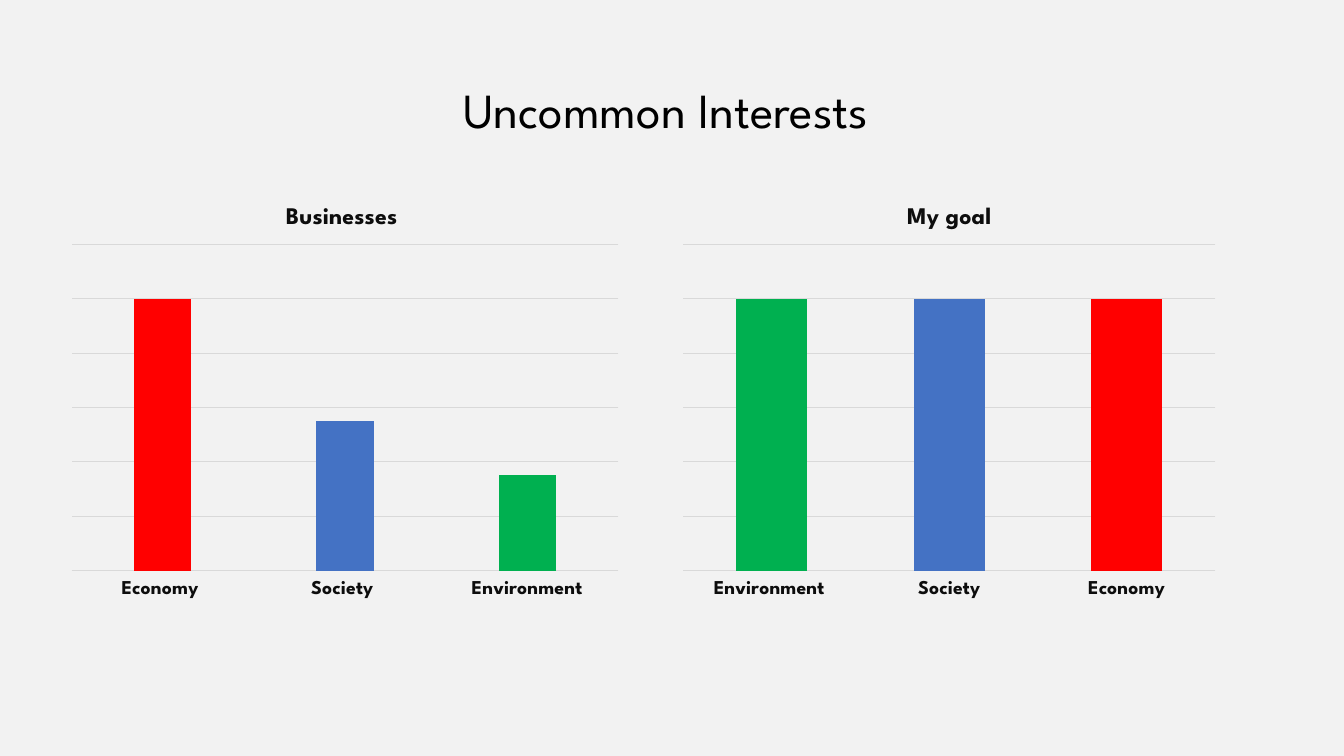
from lxml import etree
from pptx import Presentation
from pptx.chart.data import CategoryChartData
from pptx.dml.color import RGBColor
from pptx.enum.chart import XL_CHART_TYPE as CT, XL_TICK_LABEL_POSITION as TLP, XL_TICK_MARK as TM
from pptx.enum.text import MSO_ANCHOR, PP_ALIGN
from pptx.oxml import parse_xml
from pptx.oxml.ns import nsdecls
from pptx.util import Cm, Pt

BACK = RGBColor(0xF2, 0xF2, 0xF2)
BLACK = RGBColor(0x00, 0x00, 0x00)
INK = RGBColor(0x0D, 0x0D, 0x0D)
GRID = RGBColor(0xD9, 0xD9, 0xD9)
RED = RGBColor(0xFF, 0x00, 0x00)
BLUE = RGBColor(0x44, 0x72, 0xC4)
GREEN = RGBColor(0x00, 0xB0, 0x50)
FONT = "League Spartan"
PLOT = {"x": 0.02, "y": 0.14, "w": 0.96, "h": 0.79}


def set_font(font, size, color, bold):
    font.name = FONT
    font.size = Pt(size)
    font.bold = bold
    font.color.rgb = color


prs = Presentation()
prs.slide_width, prs.slide_height = Cm(33.87), Cm(19.05)
s = prs.slides.add_slide(prs.slide_layouts[5])
s.background.fill.solid()
s.background.fill.fore_color.rgb = BACK

title = s.shapes.title
title.left, title.top, title.width, title.height = Cm(2.33), Cm(1.01), Cm(29.21), Cm(3.68)
tf = title.text_frame
tf.text = "Uncommon Interests "
tf.vertical_anchor = MSO_ANCHOR.MIDDLE
p = tf.paragraphs[0]
p.alignment = PP_ALIGN.CENTER
p.line_spacing = 0.9
set_font(p.runs[0].font, 35, BLACK, False)

charts = [
    ("Businesses ", CT.COLUMN_CLUSTERED, 1.52, 14.35, 219, -27,
     [("Economy ", 100, RED), ("Society ", 55, BLUE), ("Environment", 35, GREEN)]),
    ("My goal", CT.COLUMN_STACKED, 16.94, 13.97, 150, 100,
     [("Environment ", 100, GREEN), ("Society", 100, BLUE), ("Economy", 100, RED)]),
]
for heading, kind, left, width, gap, overlap, bars in charts:
    data = CategoryChartData(number_format="0")
    data.categories = [name for name, value, color in bars]
    data.add_series("Series 1", [value for name, value, color in bars])
    chart = s.shapes.add_chart(kind, Cm(left), Cm(4.7), Cm(width), Cm(10.41), data).chart
    chart.has_legend = False
    chart.font.name = "Calibri"
    chart.font.size = Pt(10)
    chart.font.color.rgb = BLACK

    tf = chart.chart_title.text_frame
    tf.text = heading
    set_font(tf.paragraphs[0].runs[0].font, 17, INK, True)
    chart.chart_title.include_in_layout = False

    cat = chart.category_axis
    cat.major_tick_mark = cat.minor_tick_mark = TM.NONE
    cat.tick_label_position = TLP.LOW
    cat.format.line.color.rgb = GRID
    cat.format.line.width = Pt(0.75)
    set_font(cat.tick_labels.font, 14, INK, True)

    val = chart.value_axis
    val.minimum_scale, val.maximum_scale, val.major_unit = 0, 120, 20
    val.tick_labels.number_format = "0%"
    val.tick_labels.number_format_is_linked = False
    val.major_gridlines.format.line.color.rgb = GRID
    val.major_gridlines.format.line.width = Pt(0.75)
    val.visible = False

    plot = chart.plots[0]
    plot.gap_width, plot.overlap = gap, overlap
    plot.vary_by_categories = False
    for i, (name, value, color) in enumerate(bars):
        fill = plot.series[0].points[i].format.fill
        fill.solid()
        fill.fore_color.rgb = color

    area = chart.element.chart.plotArea
    for old in area.findall("{*}layout"):
        area.remove(old)
    layout = parse_xml(f"<c:layout {nsdecls('c')}><c:manualLayout/></c:layout>")
    settings = [("layoutTarget", "inner"), ("xMode", "edge"), ("yMode", "edge"), *PLOT.items()]
    for tag, setting in settings:
        node = etree.SubElement(layout[0], f"{{{layout.nsmap['c']}}}{tag}")
        node.set("val", str(setting))
    area.insert(0, layout)

prs.save("out.pptx")
